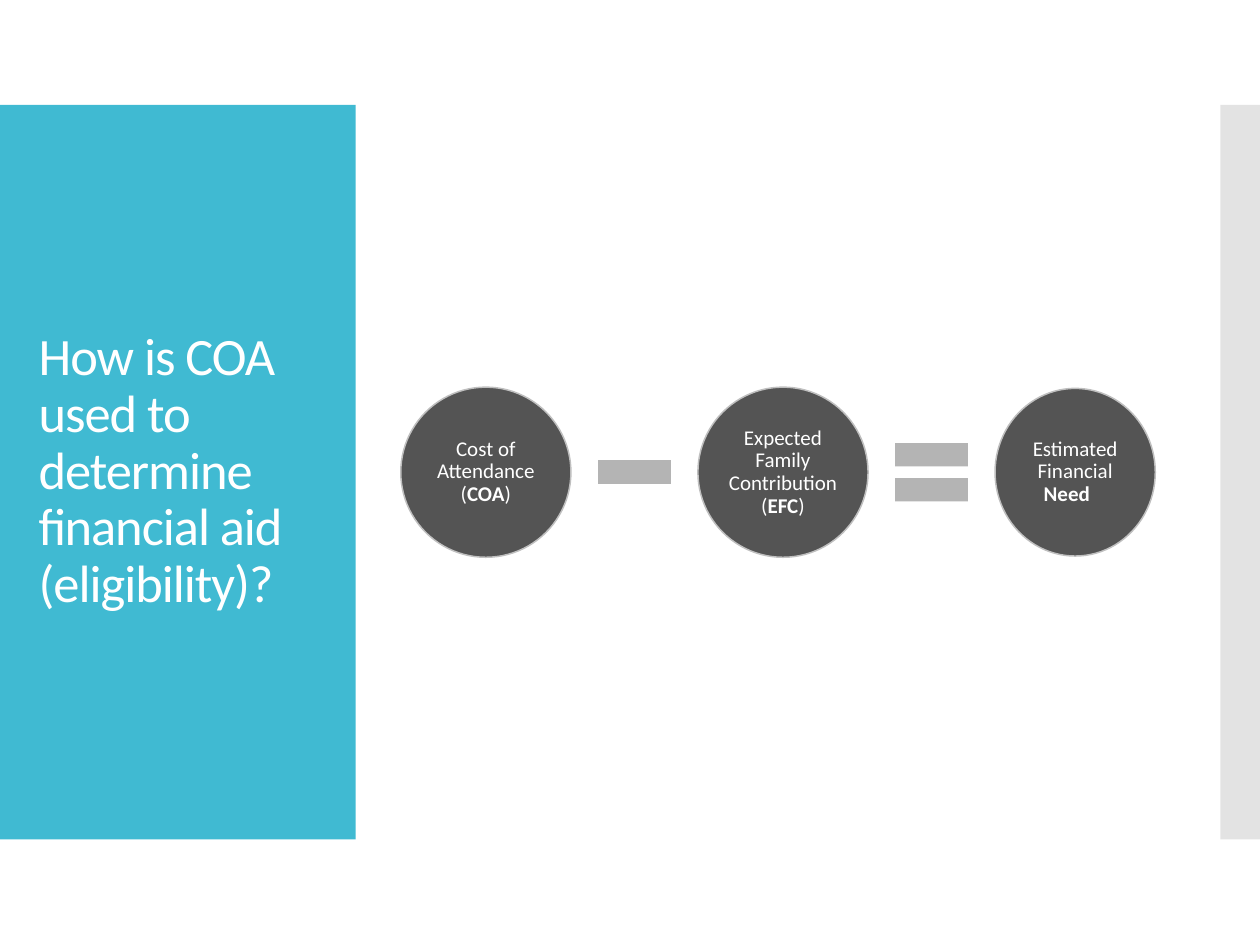
import dataclasses

import pptx
import pptx.dml.color
import pptx.enum.shapes
import pptx.enum.text
import pptx.oxml
import pptx.oxml.ns
import pptx.util
from pptx.util import Cm

SHAPES = pptx.enum.shapes.MSO_SHAPE
ALIGN = pptx.enum.text.PP_ALIGN


@dataclasses.dataclass(frozen=True)
class Theme:
    font: str = "Calibri"
    title_size: float = 30
    label_size: float = 12
    text: str = "FFFFFF"
    title_panel: str = "40BAD2"
    edge_panel: str = "C8C8C8"
    circle: str = "545454"
    circle_line: str = "BFBFBF"
    operator: str = "B4B4B4"


THEME = Theme()
MIDDLE = 9.52
GAP = 0.28
ROW_LEFT = 8.08
PANEL_HEIGHT = 14.81
OPERATOR_SIZE = 2


def color(value):
    return pptx.dml.color.RGBColor.from_string(value)


def add_filled(slide, kind, left, width, height, fill):
    shape = slide.shapes.add_shape(
        kind, Cm(left), Cm(MIDDLE - height / 2), Cm(width), Cm(height))
    shape.shadow.inherit = False
    shape.fill.solid()
    shape.fill.fore_color.rgb = color(fill)
    shape.line.fill.background()
    return shape


def set_opacity(shape, percent):
    fill_color = shape.fill._xPr.find(".//" + pptx.oxml.ns.qn("a:srgbClr"))
    alpha = pptx.oxml.parse_xml(
        f'<a:alpha {pptx.oxml.ns.nsdecls("a")} val="{percent * 1000}"/>')
    fill_color.append(alpha)


def write_text(shape, runs, size, alignment, spacing=0):
    frame = shape.text_frame
    frame.word_wrap = True
    frame.vertical_anchor = pptx.enum.text.MSO_ANCHOR.MIDDLE
    paragraph = frame.paragraphs[0]
    paragraph.alignment = alignment
    paragraph.line_spacing = 0.9
    for text, bold in runs:
        run = paragraph.add_run()
        run.text = text
        run.font.name = THEME.font
        run.font.size = pptx.util.Pt(size)
        run.font.bold = bold
        run.font.color.rgb = color(THEME.text)
        if spacing:
            run.font._element.set("spc", str(round(spacing * 100)))


def add_title(slide, text):
    height = 12.78
    box = slide.shapes.add_textbox(
        Cm(0.53), Cm(MIDDLE - height / 2), Cm(6.15), Cm(height))
    write_text(box, [(text, False)], THEME.title_size, ALIGN.LEFT, spacing=-0.6)


def add_circle(slide, left, width, height, runs):
    circle = add_filled(slide, SHAPES.OVAL, left, width, height, THEME.circle)
    circle.line.color.rgb = color(THEME.circle_line)
    circle.line.width = pptx.util.Pt(0.85)
    frame = circle.text_frame
    frame.margin_left = frame.margin_right = Cm(0.05)
    frame.margin_top = frame.margin_bottom = Cm(0.05)
    write_text(circle, runs, THEME.label_size, ALIGN.CENTER)


def add_equation(slide):
    terms = [
        (3.43, 3.43, [("Cost of Attendance (", False), ("COA", True), (")", False)]),
        (3.43, 3.43, [("Expected Family Contribution (", False), ("EFC", True), (")", False)]),
        (3.23, 3.38, [("Estimated Financial ", False), ("Need \t", True)]),
    ]
    operators = [SHAPES.MATH_MINUS, SHAPES.MATH_EQUAL, None]
    left = ROW_LEFT
    for (width, height, runs), operator in zip(terms, operators):
        add_circle(slide, left, width, height, runs)
        left += width + GAP
        if operator is not None:
            add_filled(slide, operator, left, OPERATOR_SIZE, OPERATOR_SIZE, THEME.operator)
            left += OPERATOR_SIZE + GAP


def main():
    presentation = pptx.Presentation()
    presentation.slide_width = Cm(25.4)
    presentation.slide_height = Cm(19.05)
    slide = presentation.slides.add_slide(presentation.slide_layouts[6])
    add_filled(slide, SHAPES.RECTANGLE, 0, 7.17, PANEL_HEIGHT, THEME.title_panel)
    edge = add_filled(slide, SHAPES.RECTANGLE, 24.6, 0.8, PANEL_HEIGHT, THEME.edge_panel)
    set_opacity(edge, 50)
    add_title(slide, "How is COA used to determine financial aid (eligibility)?")
    add_equation(slide)
    presentation.save("out.pptx")


if __name__ == "__main__":
    main()
